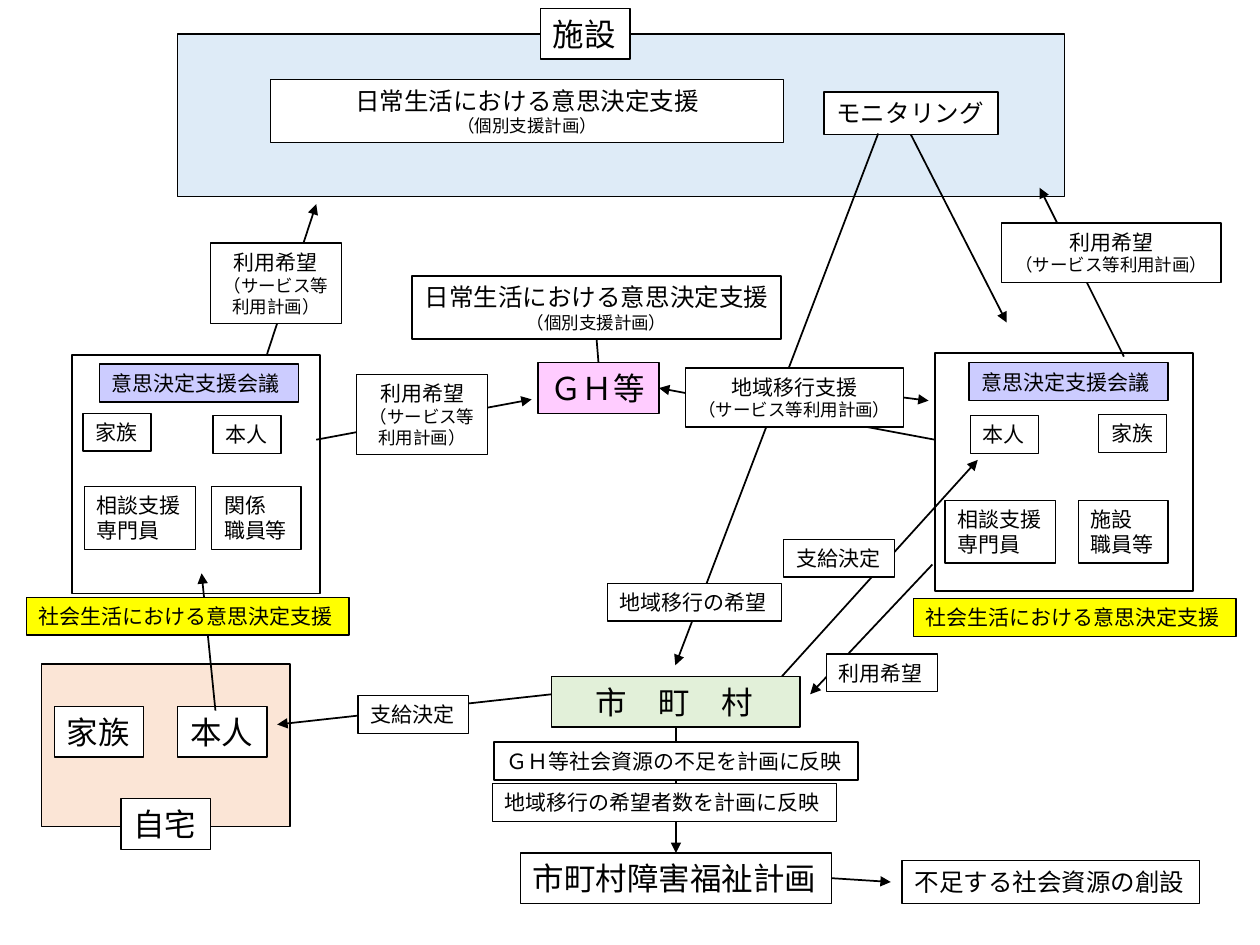
from lxml import etree
from pptx import Presentation
from pptx.dml.color import RGBColor
from pptx.enum.shapes import MSO_CONNECTOR, MSO_SHAPE
from pptx.enum.text import MSO_AUTO_SIZE, PP_ALIGN
from pptx.oxml.ns import qn
from pptx.util import Inches, Pt

RECTANGLE = MSO_SHAPE.RECTANGLE
STRAIGHT = MSO_CONNECTOR.STRAIGHT
GROW = MSO_AUTO_SIZE.SHAPE_TO_FIT_TEXT
LEFT, CENTER = PP_ALIGN.LEFT, PP_ALIGN.CENTER
TOP_SIDE, BOTTOM_SIDE, RIGHT_SIDE = 0, 2, 3

COLORS = {
    "ink": "000000", "paper": "FFFFFF", "home": "FBE5D6", "facility": "DEEBF7",
    "group_home": "FFCCFF", "town": "E2F0D9", "meeting": "CCCCFF", "social": "FFFF00",
}

prs = Presentation()
prs.slide_width, prs.slide_height = Inches(10), Inches(7.5)
slide = prs.slides.add_slide(prs.slide_layouts[6])
COLUMN = prs.slide_width / 100
ROW = prs.slide_height / 75
placed = {}


def add_box(left, top, width, height, fill, text="", size=12):
    area = [round(n * unit) for n, unit in
            ((left, COLUMN), (top, ROW), (width, COLUMN), (height, ROW))]
    if text:
        box = slide.shapes.add_textbox(*area)
    else:
        box = slide.shapes.add_shape(RECTANGLE, *area)
        box.shadow.inherit = False
    if fill:
        box.fill.solid()
        box.fill.fore_color.rgb = RGBColor.from_string(COLORS[fill])
    box.line.color.rgb = RGBColor.from_string(COLORS["ink"])
    box.line.width = Pt(0.75 if text else 1)
    if not text:
        return
    lines = text.split("\n")
    has_note = lines[-1].startswith("（")
    frame = box.text_frame
    frame.word_wrap = has_note or fill == "meeting"
    frame.auto_size = GROW
    for i, line in enumerate(lines):
        paragraph = frame.paragraphs[0] if i == 0 else frame.add_paragraph()
        paragraph.text = line
        paragraph.alignment = CENTER if has_note else LEFT
        paragraph.font.name = "Calibri"
        paragraph.font.size = Pt(10 if line.startswith("（") else size)
        paragraph.font.color.rgb = RGBColor.from_string(COLORS["ink"])
    placed[lines[0]] = box


def add_link(start, end, arrow=True):
    link = slide.shapes.add_connector(STRAIGHT, 0, 0, 0, 0)
    if isinstance(start[0], str):
        link.begin_connect(placed[start[0]], start[1])
    else:
        link.begin_x, link.begin_y = round(start[0] * COLUMN), round(start[1] * ROW)
    if isinstance(end[0], str):
        link.end_connect(placed[end[0]], end[1])
    else:
        link.end_x, link.end_y = round(end[0] * COLUMN), round(end[1] * ROW)
    link.line.color.rgb = RGBColor.from_string(COLORS["ink"])
    link.line.width = Pt(1)
    if arrow:
        etree.SubElement(link.line._get_or_add_ln(), qn("a:tailEnd"), type="triangle")
    etree.SubElement(link._element.spPr, qn("a:effectLst"))


DAILY = "日常生活における意思決定支援"
DAILY_NOTE = DAILY + "\n（個別支援計画）"
SERVICE_NOTE = "\n（サービス等利用計画）"
WISH = "利用希望"
SPECIALIST = "相談支援\n専門員"
TOWN = "　市　町　村　"
PLAN = "市町村障害福祉計画"
MONITORING = "モニタリング"
GROUP_HOME = "ＧＨ等"
TRANSITION = "地域移行支援"

base_boxes = [
    (3.3, 52.7, 19.7, 12.9, "home"),
    (14.1, 2.7, 70.4, 12.9, "facility"),
    (5.7, 28.2, 19.7, 18.9, "paper"),
    (74.2, 28, 20.5, 18.9, "paper"),
    (65.4, 7.3, 13.8, 3.4, "paper", MONITORING, 14),
    (41.3, 67.7, 24.7, 4, "paper", PLAN, 18),
    (42.7, 28.8, 9.6, 4, "group_home", GROUP_HOME, 18),
    (32.7, 21.9, 29.3, 5, "paper", DAILY_NOTE, 14),
    (14.1, 56.1, 7.1, 4, "paper", "本人", 18),
]
base_links = [
    ((PLAN, RIGHT_SIDE), (70.7, 70)),
    ((21.2, 28.1), (25.1, 16.2)),
    ((43.8, 55.1), (22, 57.5)),
    ((MONITORING, BOTTOM_SIDE), (79.9, 25.6)),
    ((25.1, 34.9), (42.2, 31.7)),
    ((89.2, 28.3), (82.5, 14.9)),
    ((74.2, 34.9), (GROUP_HOME, RIGHT_SIDE)),
    ((17.1, 56.4), (16, 45.5)),
    ((59.6, 56.4), (77.6, 36.5)),
    ((69.7, 10.6), (53.6, 52.8)),
    ((74, 44.8), (64.3, 55.1)),
    ((DAILY, BOTTOM_SIDE), (GROUP_HOME, TOP_SIDE), False),
]

hub_boxes = [
    (43.8, 53.7, 19.7, 4, "town", TOWN, 18),
    (54.4, 29.2, 17.3, 4.7, "paper", TRANSITION + SERVICE_NOTE),
]
hub_links = [
    ((TOWN, BOTTOM_SIDE), (PLAN, TOP_SIDE)),
    ((TRANSITION, RIGHT_SIDE), (73.7, 31.8)),
]

labels = [
    (42.9, 0.7, 7.1, 4, "paper", "施設", 18),
    (4.3, 56.1, 7.1, 4, "paper", "家族", 18),
    (9.6, 63.4, 7.1, 4, "paper", "自宅", 18),
    (21.5, 6.3, 40.7, 5, "paper", DAILY_NOTE, 14),
    (71.6, 68.3, 23.6, 3.4, "paper", "不足する社会資源の創設", 14),
    (7.9, 28.9, 15.8, 3, "meeting", "意思決定支援会議"),
    (6.6, 32.8, 5.4, 3, None, "家族"),
    (16.9, 33, 5.4, 3, None, "本人"),
    (6.7, 38.6, 8.8, 5, None, SPECIALIST),
    (16.8, 38.6, 7.1, 5, None, "関係\n職員等"),
    (2.1, 47.4, 25.6, 3, "social", "社会生活における意思決定支援"),
    (76.9, 28.8, 15.8, 3, "meeting", "意思決定支援会議"),
    (77, 33, 5.4, 3, None, "本人"),
    (87.2, 32.9, 5.4, 3, None, "家族"),
    (75, 39.7, 8.8, 5, None, SPECIALIST),
    (85.6, 39.7, 7.1, 5, None, "施設\n職員等"),
    (72.5, 47.5, 25.6, 3, "social", "社会生活における意思決定支援"),
    (28.4, 55.2, 8.8, 3, "paper", "支給決定"),
    (62.2, 42.8, 8.8, 3, "paper", "支給決定"),
    (65.6, 51.9, 8.8, 3, "paper", WISH),
    (48.2, 46.3, 13.8, 3, "paper", "地域移行の希望"),
    (39.2, 58.9, 28.9, 3, "paper", "ＧＨ等社会資源の不足を計画に反映"),
    (39.1, 62.2, 27.3, 3, "paper", "地域移行の希望者数を計画に反映"),
    (79.5, 17.7, 17.4, 4.7, "paper", WISH + SERVICE_NOTE),
    (16.7, 19.3, 10.4, 6.4, "paper", WISH + SERVICE_NOTE),
    (28.3, 29.7, 10.4, 6.4, "paper", WISH + SERVICE_NOTE),
]

for boxes, links in ((base_boxes, base_links), (hub_boxes, hub_links), (labels, [])):
    for box_row in boxes:
        add_box(*box_row)
    for link_row in links:
        add_link(*link_row)

prs.save("out.pptx")
